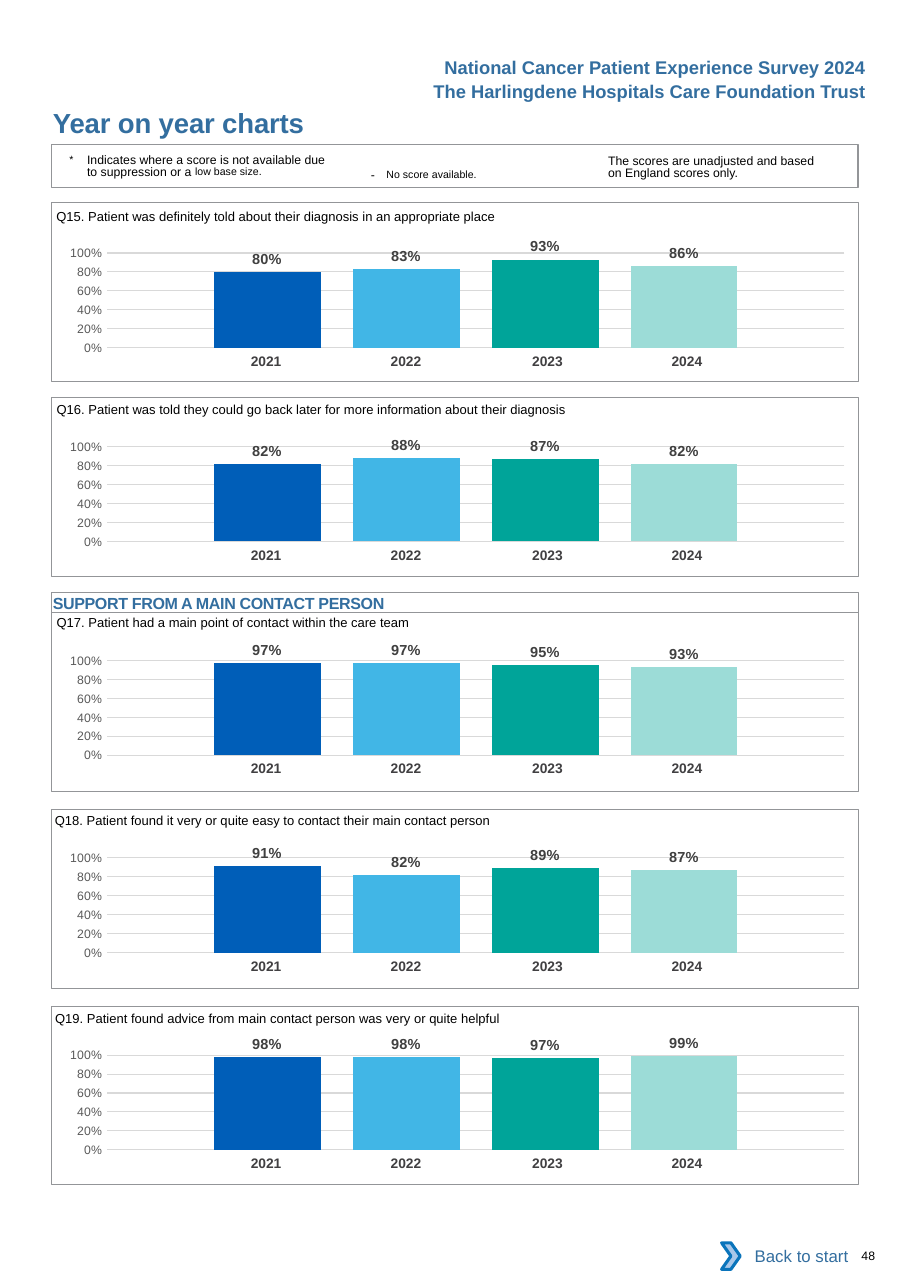
from lxml.etree import SubElement
from pptx import Presentation
from pptx.chart.data import CategoryChartData
from pptx.dml.color import RGBColor
from pptx.enum.chart import XL_CHART_TYPE, XL_LABEL_POSITION, XL_TICK_MARK
from pptx.enum.shapes import MSO_SHAPE
from pptx.enum.text import MSO_ANCHOR, PP_ALIGN
from pptx.oxml.ns import qn
from pptx.util import Pt

BLACK = RGBColor(0x00, 0x00, 0x00)
WHITE = RGBColor(0xFF, 0xFF, 0xFF)
HEADING_BLUE = RGBColor(0x33, 0x6E, 0x9F)
FRAME_GREY = RGBColor(0x93, 0x95, 0x98)
GRID_GREY = RGBColor(0xD9, 0xD9, 0xD9)
AXIS_GREY = RGBColor(0x59, 0x59, 0x59)
LABEL_GREY = RGBColor(0x40, 0x40, 0x40)
YEAR_GREY = RGBColor(0x41, 0x40, 0x42)
CHEVRON_FILL = RGBColor(0xA8, 0xC7, 0xE9)
CHEVRON_LINE = RGBColor(0x0A, 0x74, 0xBB)
YEAR_COLORS = {
    "2021": RGBColor(0x00, 0x5E, 0xB8),
    "2022": RGBColor(0x41, 0xB6, 0xE6),
    "2023": RGBColor(0x00, 0xA4, 0x99),
    "2024": RGBColor(0x9C, 0xDC, 0xD7),
}

FRAME_LEFT, FRAME_WIDTH, FRAME_HEIGHT = 33.8, 527, 116.6
YEAR_COLUMNS = [(91.4, 0), (91.4, 0), (96.5, 2.9), (91.4, 8.6)]  # width, right margin
PLOT_LAYOUT = {"layoutTarget": "inner", "xMode": "edge", "yMode": "edge",
               "x": 0.079, "y": 0.145, "w": 0.915, "h": 0.666}

# frame top, chart top, question left, question top, question, scores
QUESTIONS = [
    (132.5, 151.9, 36.8, 136.1,
     "Q15. Patient was definitely told about their diagnosis in an appropriate place",
     (0.80, 0.83, 0.93, 0.86)),
    (260, 278.6, 37, 262.1,
     "Q16. Patient was told they could go back later for more information about their diagnosis",
     (0.82, 0.88, 0.87, 0.82)),
    (400.3, 418.3, 37, 401.8,
     "Q17. Patient had a main point of contact within the care team",
     (0.97, 0.97, 0.95, 0.93)),
    (529.2, 547.2, 35.8, 530.7,
     "Q18. Patient found it very or quite easy to contact their main contact person",
     (0.91, 0.82, 0.89, 0.87)),
    (657.4, 676.1, 36, 660.3,
     "Q19. Patient found advice from main contact person was very or quite helpful",
     (0.98, 0.98, 0.97, 0.99)),
]


def set_font(font, size, color, bold=False, name="Arial"):
    for key, value in {"name": name, "size": Pt(size), "bold": bold}.items():
        setattr(font, key, value)
    font.color.rgb = color


def add_span(para, text, size, color=BLACK, bold=False, **run_format):
    """run_format takes spc and baseline, in hundredths and thousandths."""
    span = para.add_run()
    span.text = text
    set_font(span.font, size, color, bold)
    for key, value in run_format.items():
        span._r.get_or_add_rPr().set(key, str(value))


def prepare_frame(shape, margins=(0, 0, 0, 0), align=PP_ALIGN.LEFT,
                  anchor=MSO_ANCHOR.TOP):
    frame = shape.text_frame
    left, top, right, bottom = (Pt(margin) for margin in margins)
    settings = {"word_wrap": True, "vertical_anchor": anchor, "margin_left": left,
                "margin_top": top, "margin_right": right, "margin_bottom": bottom}
    for key, value in settings.items():
        setattr(frame, key, value)
    para = frame.paragraphs[0]
    para.alignment = align
    return para


def add_text(page, area, **settings):
    """Add an empty text box and return its paragraph."""
    box = page.shapes.add_textbox(*(Pt(length) for length in area))
    return prepare_frame(box, **settings)


def add_outline(page, area, line=FRAME_GREY, width=0.5, fill=None,
                kind=MSO_SHAPE.RECTANGLE):
    shape = page.shapes.add_shape(kind, *(Pt(length) for length in area))
    shape.shadow.inherit = False
    if fill is None:
        shape.fill.background()
    else:
        shape.fill.solid()
        shape.fill.fore_color.rgb = fill
    if line is None:
        shape.line.fill.background()
    else:
        shape.line.color.rgb = line
        shape.line.width = Pt(width)
    return shape


def fix_plot_area(chart):
    plot_area = chart._chartSpace.chart.plotArea
    for old_layout in plot_area.findall(qn("c:layout")):
        plot_area.remove(old_layout)
    layout = SubElement(plot_area, qn("c:layout"))
    plot_area.insert(0, layout)
    manual = SubElement(layout, qn("c:manualLayout"))
    for key, value in PLOT_LAYOUT.items():
        SubElement(manual, qn("c:" + key)).set("val", str(value))


def add_score_chart(page, top, scores):
    data = CategoryChartData(number_format="0%")
    data.categories = ["1"]
    for year, score in zip(YEAR_COLORS, scores):
        data.add_series(year, [score])
    chart = page.shapes.add_chart(XL_CHART_TYPE.COLUMN_CLUSTERED, Pt(28.1), Pt(top),
                                  Pt(527), Pt(92.9), data).chart
    chart.has_legend = chart.has_title = False
    set_font(chart.font, 10, BLACK, name="Calibri")
    chart.category_axis.visible = False

    axis = chart.value_axis
    for key, value in {"minimum_scale": 0, "maximum_scale": 1, "major_unit": 0.2,
                       "major_tick_mark": XL_TICK_MARK.NONE,
                       "minor_tick_mark": XL_TICK_MARK.NONE}.items():
        setattr(axis, key, value)
    axis.format.line.fill.background()
    grid_line = axis.major_gridlines.format.line
    grid_line.color.rgb = GRID_GREY
    grid_line.width = Pt(0.75)
    set_font(axis.tick_labels.font, 8, AXIS_GREY)
    axis.tick_labels.number_format = "0%"
    axis.tick_labels.number_format_is_linked = False

    plot = chart.plots[0]
    for key, value in {"gap_width": 200, "overlap": -30,
                       "vary_by_categories": False}.items():
        setattr(plot, key, value)
    for series, color in zip(plot.series, YEAR_COLORS.values()):
        series.format.fill.solid()
        series.format.fill.fore_color.rgb = color
        labels = series.data_labels
        for key, value in {"show_value": True, "number_format": "0%",
                           "number_format_is_linked": False,
                           "position": XL_LABEL_POSITION.OUTSIDE_END}.items():
            setattr(labels, key, value)
        set_font(labels.font, 9.5, LABEL_GREY, bold=True)
    fix_plot_area(chart)


def add_year_table(page, top):
    table = page.shapes.add_table(1, len(YEAR_COLUMNS), Pt(124.6), Pt(top),
                                  Pt(370.7), Pt(19.4)).table
    table.first_row = table.horz_banding = False
    style = table._tbl.tblPr.find(qn("a:tableStyleId"))
    style.text = "{2D5ABB26-0587-4C30-8999-92F81FD0307C}"  # no style, no grid
    for index, (year, (width, right)) in enumerate(zip(YEAR_COLORS, YEAR_COLUMNS)):
        table.columns[index].width = Pt(width)
        cell = table.cell(0, index)
        cell.fill.background()
        cell.margin_left, cell.margin_right = Pt(7.2), Pt(right)
        para = cell.text_frame.paragraphs[0]
        para.alignment = PP_ALIGN.CENTER
        add_span(para, year, 9, YEAR_GREY, bold=True)


def add_question(page, frame_top, chart_top, left, top, question, scores):
    add_year_table(page, chart_top + 75.6)
    add_score_chart(page, chart_top, scores)
    add_outline(page, (FRAME_LEFT, frame_top, FRAME_WIDTH, FRAME_HEIGHT))
    add_span(add_text(page, (left, top, 500, 11)), question, 8.5)


def add_header(page):
    for top, line in [(33.1, "National Cancer Patient Experience Survey 2024"),
                      (49, "The Harlingdene Hospitals Care Foundation Trust")]:
        para = add_text(page, (273, top, 300, 21.6), margins=(7.2, 3.6, 7.2, 3.6),
                        align=PP_ALIGN.RIGHT)
        add_span(para, line, 12, HEADING_BLUE, bold=True)
    title = add_text(page, (34.6, 69.1, 324, 21.6))
    add_span(title, "Year on year charts", 18, HEADING_BLUE, bold=True, spc=-10)


def add_legend(page):
    add_outline(page, (FRAME_LEFT, 94.3, FRAME_WIDTH, 28.1), width=0.75)
    suppressed = add_text(page, (45.4, 99.4, 172, 19), margins=(0, 2.2, 0, 0))
    suppressed.line_spacing = Pt(8.1)
    properties = suppressed._p.get_or_add_pPr()
    properties.set("marL", str(Pt(11.5)))
    properties.set("indent", str(-Pt(11.5)))
    add_span(suppressed, "*\t", 12, baseline=3000)
    add_span(suppressed, "Indicates where a score is not available due to suppression or a ", 8)
    add_span(suppressed, "low base size.", 12, baseline=7000)

    missing = add_text(page, (235.4, 101.5, 131.8, 17.3), margins=(7.2, 3.6, 7.2, 3.6))
    add_span(missing, "- ", 8, spc=260)
    add_span(missing, "No score available.", 12, baseline=3000)

    unadjusted = add_text(page, (397.4, 99.4, 144, 19.4), margins=(0, 2.2, 0, 0))
    unadjusted.line_spacing = Pt(8.1)
    add_span(unadjusted, "The scores are unadjusted and based on England scores only.", 8)


def add_section_heading(page):
    banner = add_outline(page, (FRAME_LEFT, 387.4, FRAME_WIDTH, 13))
    para = prepare_frame(banner, margins=(0.7, 0.7, 0, 0))
    add_span(para, "SUPPORT FROM A MAIN CONTACT PERSON", 10.5, HEADING_BLUE, bold=True, spc=-20)


def add_footer(page):
    button = add_outline(page, (476.6, 805.7, 85, 30.2), line=None, fill=WHITE)
    para = prepare_frame(button, margins=(7.2, 3.6, 7.2, 3.6), align=PP_ALIGN.RIGHT,
                         anchor=MSO_ANCHOR.MIDDLE)
    add_span(para, "Back to start", 11, HEADING_BLUE)
    add_outline(page, (471.6, 812.2, 12.2, 17.3), line=CHEVRON_LINE, width=2,
                fill=CHEVRON_FILL, kind=MSO_SHAPE.CHEVRON)
    add_span(add_text(page, (563, 815.8, 29, 9.4)), "48", 8)


def main():
    deck = Presentation()
    deck.slide_width, deck.slide_height = Pt(594.72), Pt(841.68)
    page = deck.slides.add_slide(deck.slide_layouts[6])
    add_header(page)
    add_legend(page)
    for question in QUESTIONS:
        add_question(page, *question)
    add_section_heading(page)
    add_footer(page)
    deck.save("out.pptx")


if __name__ == "__main__":
    main()
